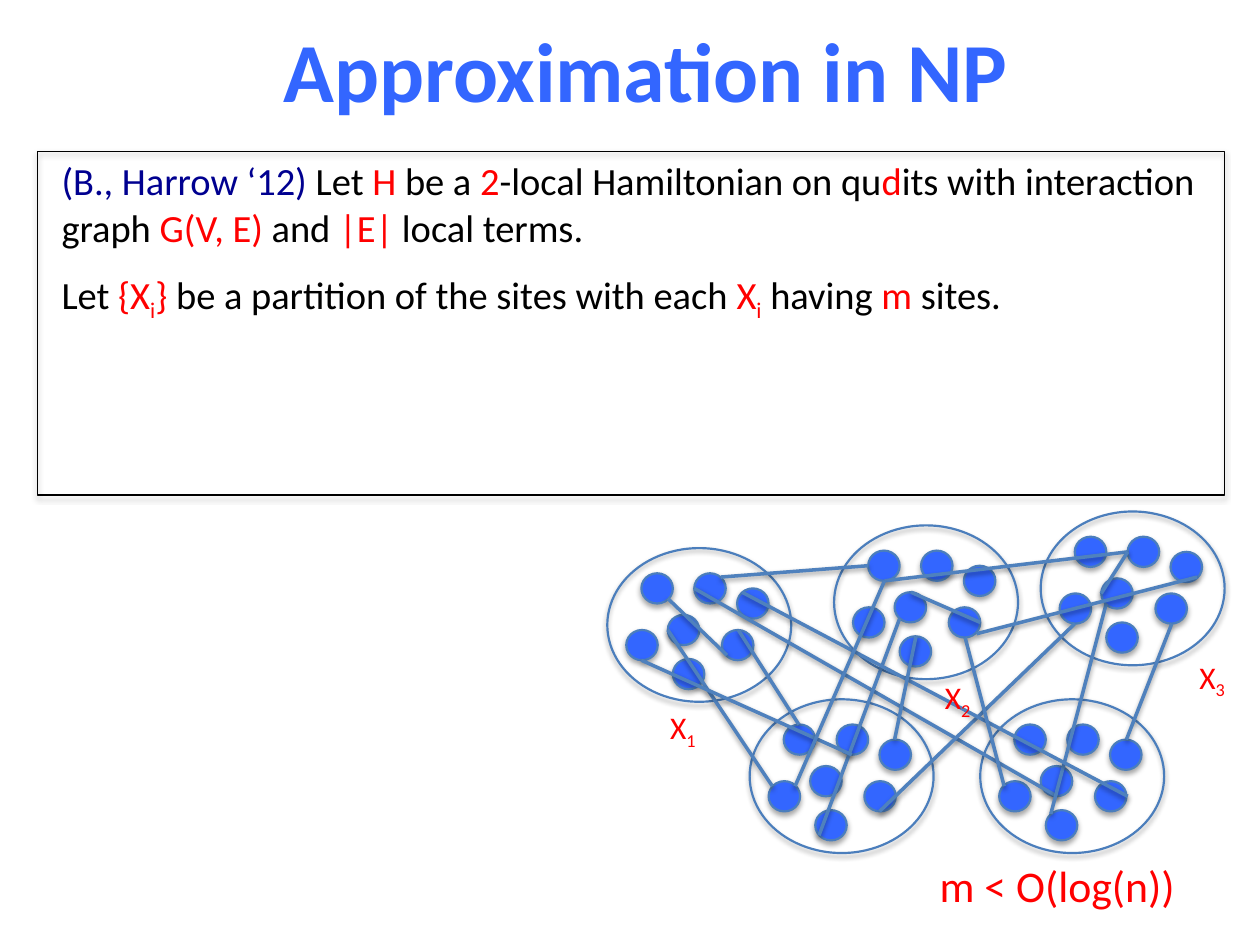
from dataclasses import dataclass

from lxml.etree import SubElement
from pptx import Presentation
from pptx.dml.color import RGBColor
from pptx.enum.shapes import MSO_CONNECTOR, MSO_SHAPE
from pptx.enum.text import MSO_ANCHOR, PP_ALIGN
from pptx.oxml.ns import qn
from pptx.util import Inches, Pt


@dataclass(frozen=True)
class Theme:
    font: str = "Calibri"
    blue: str = "3366FF"
    navy: str = "000090"
    black: str = "000000"
    red: str = "FF0000"
    outline: str = "4B7EBC"
    edge: str = "4F81BD"
    title_size: float = 48
    body_size: float = 22
    label_size: float = 18
    bound_size: float = 25
    shape_shadow: tuple = (35, 1.8)  # opacity in percent, distance in points
    edge_shadow: tuple = (38, 1.6)


THEME = Theme()
COLUMNS, ROWS = 100, 75  # grid over the slide
WIDTH, HEIGHT = Inches(10), Inches(7.5)

CLUSTER_SIZE = (14.6, 12.2)
SITE_SIZE = (2.5, 2.4)
CLUSTERS = [(48.2, 43.5), (66.2, 41.7), (59.5, 55.5), (82.6, 40.6), (77.8, 55.5)]
SITE_OFFSETS = [(2.7, 2), (6.9, 2), (5.2, 8.8), (4.8, 5.3),
                (1.5, 6.5), (10.3, 3.2), (9.1, 6.5)]
# Interactions between sites: start column, start row, end column, end row
INTERACTIONS = [
    (58.6, 50, 63.4, 57.5), (55.1, 46.7, 83.9, 63.2), (85.3, 49.5, 69.8, 64.4),
    (53, 50, 61.3, 62.4), (53, 47.5, 57.7, 52), (71.4, 49.1, 65, 66.3),
    (70.2, 46.1, 89.5, 43.8), (87.8, 47.9, 83.4, 64.6), (89.5, 63.2, 58.9, 47),
    (93, 49.5, 89.4, 58.7), (67.6, 59.9, 50.9, 52.4), (71, 58.7, 72.7, 50.5),
    (70.2, 46.1, 63.1, 62.4), (89.5, 43.8, 87.4, 47.1), (95, 45.8, 77.5, 50.3),
    (76.6, 50.6, 79.7, 62.4), (77.8, 49.4, 72.3, 47), (57.2, 45.8, 68.9, 44.9),
]
CLUSTER_LABELS = [("1", 52.2, 55.7), ("2", 74, 53.3), ("3", 94.2, 51.7)]

# Each run: text, colour, whether it is a subscript
PLAIN, ACCENT = (THEME.black, False), (THEME.red, False)
INDEX, CITATION = (THEME.red, True), (THEME.navy, False)
STATEMENT = [
    [("(B., Harrow ‘12) ", *CITATION), ("Let ", *PLAIN), ("H", *ACCENT),
     (" be a ", *PLAIN), ("2", *ACCENT), ("-local Hamiltonian on qu", *PLAIN),
     ("d", *ACCENT), ("its with interaction graph ", *PLAIN),
     ("G(V, E) ", *ACCENT), ("and ", *PLAIN), ("|E|", *ACCENT),
     (" local terms.", *PLAIN)],
    [("Let ", *PLAIN), ("{X", *ACCENT), ("i", *INDEX), ("} ", *ACCENT),
     ("be a partition of the sites with each ", *PLAIN), ("X", *ACCENT),
     ("i", *INDEX), (" having ", *PLAIN), ("m", *ACCENT), (" sites.", *PLAIN)],
]


def across(columns):
    return round(WIDTH * columns / COLUMNS)


def down(rows):
    return round(HEIGHT * rows / ROWS)


def place(left, top, width, height):
    return across(left), down(top), across(width), down(height)


def apply_format(target, values):
    for name, value in values.items():
        setattr(target, name, value)


def add_shadow(shape, opacity, distance):
    effects = SubElement(shape._element.spPr, qn("a:effectLst"))
    shadow = SubElement(effects, qn("a:outerShdw"), {
        "blurRad": str(Pt(3.1)), "dist": str(Pt(distance)),
        "dir": "5400000", "rotWithShape": "0"})
    color = SubElement(shadow, qn("a:srgbClr"), val=THEME.black)
    SubElement(color, qn("a:alpha"), val=str(opacity * 1000))


def style_line(line, color, width):
    line.color.rgb = RGBColor.from_string(color)
    line.width = Pt(width)


def add_text(slide, box, paragraphs, size, bold=False, frame_format=None,
             paragraph_format=None, gap=0):
    frame = slide.shapes.add_textbox(*place(*box)).text_frame
    apply_format(frame, {"word_wrap": True, **(frame_format or {})})
    for number, runs in enumerate(paragraphs):
        paragraph = frame.add_paragraph() if number else frame.paragraphs[0]
        apply_format(paragraph, paragraph_format or {})
        if number:
            paragraph.space_before = Pt(gap)
        for text, color, subscript in runs:
            run = paragraph.add_run()
            run.text = text
            apply_format(run.font, {"name": THEME.font, "size": Pt(size), "bold": bold})
            run.font.color.rgb = RGBColor.from_string(color)
            if subscript:
                run._r.get_or_add_rPr().set("baseline", "-25000")


def add_outline(slide, kind, box, color, width, fill=None):
    shape = slide.shapes.add_shape(kind, *place(*box))
    if fill:
        shape.fill.solid()
        shape.fill.fore_color.rgb = RGBColor.from_string(fill)
    else:
        shape.fill.background()
    style_line(shape.line, color, width)
    add_shadow(shape, *THEME.shape_shadow)


def add_cluster(slide, left, top):
    add_outline(slide, MSO_SHAPE.OVAL, (left, top, *CLUSTER_SIZE), THEME.outline, 1.25)
    for x, y in SITE_OFFSETS:
        add_outline(slide, MSO_SHAPE.OVAL, (left + x, top + y, *SITE_SIZE),
                    THEME.outline, 1.25, THEME.blue)


def add_interaction(slide, x1, y1, x2, y2):
    connector = slide.shapes.add_connector(
        MSO_CONNECTOR.STRAIGHT, across(x1), down(y1), across(x2), down(y2))
    style_line(connector.line, THEME.edge, 2)
    add_shadow(connector, *THEME.edge_shadow)


def main():
    presentation = Presentation()
    apply_format(presentation, {"slide_width": WIDTH, "slide_height": HEIGHT})
    slide = presentation.slides.add_slide(presentation.slide_layouts[6])

    # Title, raised by the deep bottom margin
    add_text(slide, (1.7, 0, 99.1, 19.1), [[("Approximation in NP", THEME.blue, False)]],
             THEME.title_size, bold=True,
             frame_format={"vertical_anchor": MSO_ANCHOR.MIDDLE,
                           "margin_bottom": Inches(0.86)},
             paragraph_format={"alignment": PP_ALIGN.CENTER})

    # Statement
    add_text(slide, (3.9, 12, 93.3, 17.5), STATEMENT, THEME.body_size, gap=12)

    # Interaction graph
    for left, top in CLUSTERS:
        add_cluster(slide, left, top)
    for ends in INTERACTIONS:
        add_interaction(slide, *ends)
    for number, left, top in CLUSTER_LABELS:
        add_text(slide, (left, top, 4.6, 4), [[("X", *ACCENT), (number, *INDEX)]],
                 THEME.label_size)

    # Frame around the statement and bound on the cluster size
    add_outline(slide, MSO_SHAPE.RECTANGLE, (3, 12, 94.2, 27.3), THEME.black, 0.75)
    add_text(slide, (73.6, 67.7, 23.6, 5.2), [[("m < O(log(n))", *ACCENT)]],
             THEME.bound_size)

    presentation.save("out.pptx")


if __name__ == "__main__":
    main()
